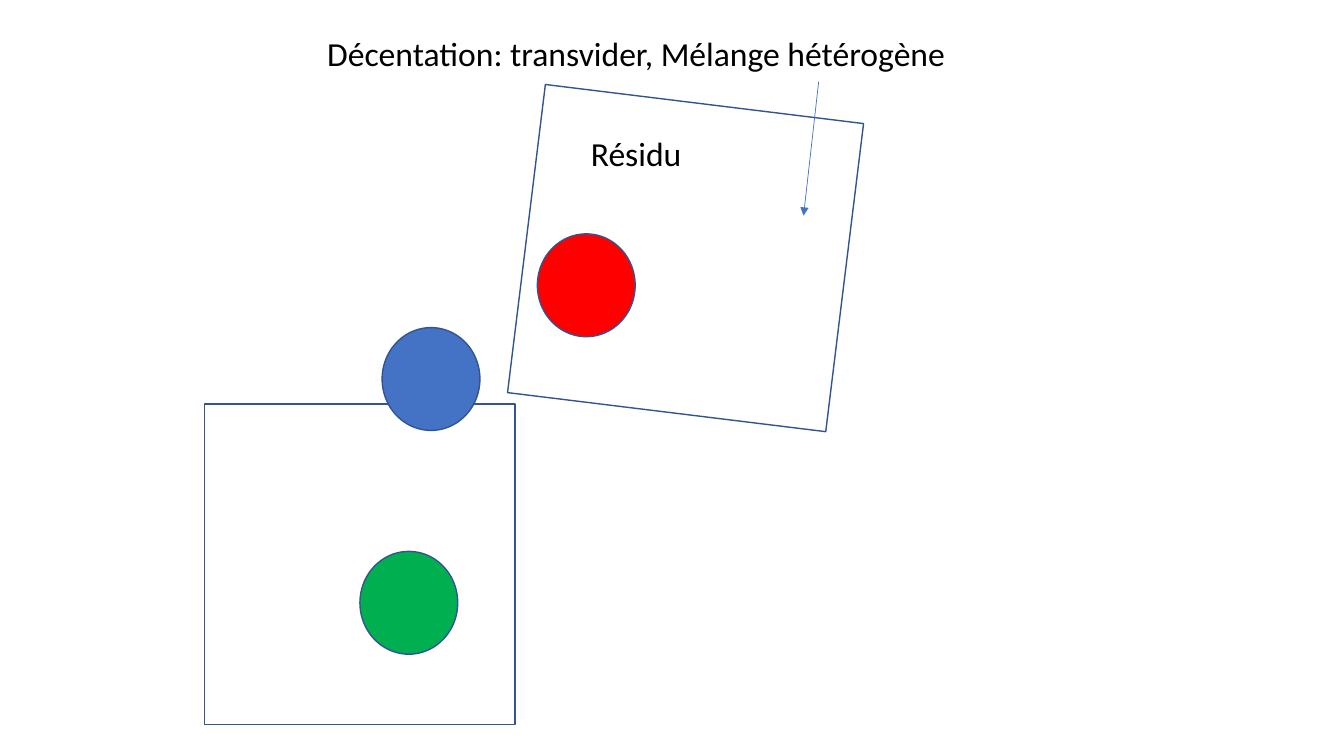
from lxml import etree
from pptx import Presentation
from pptx.dml.color import RGBColor
from pptx.enum.shapes import MSO_CONNECTOR as CONN, MSO_SHAPE as SHAPE
from pptx.enum.text import PP_ALIGN
from pptx.oxml.ns import qn
from pptx.util import Inches, Pt

FONT, BLACK, OUTLINE, BLUE = "Calibri", "000000", "325491", "4472C4"
# text, space before in points
LINES = [("Décentation: transvider, Mélange hétérogène", 0), ("Résidu", 46)]
BEAKER_SIZE = (3.08, 3.18)
BEAKERS = [(2.03, 4.01, 0), (5.26, 0.97, 277)]  # left, top, rotation
BALL_SIZE = (0.97, 1.02)
BALLS = [(3.57, 5.47, "00B050"), (3.79, 3.25, BLUE), (5.33, 2.32, "FF0000")]
ARROW = (8.12, 0.81, 7.97, 2.14)


def rgb(hex_color):
    return RGBColor.from_string(hex_color)


def add_outlined(s, kind, left, top, size, fill=None):
    shape = s.shapes.add_shape(kind, *map(Inches, (left, top, *size)))
    shape.shadow.inherit = False
    if fill:
        shape.fill.solid()
        shape.fill.fore_color.rgb = rgb(fill)
    else:
        shape.fill.background()
    shape.line.color.rgb = rgb(OUTLINE)
    shape.line.width = Pt(1)
    return shape


def add_caption(s):
    tf = s.shapes.add_textbox(*map(Inches, (1.31, 0.32, 10, 1.81))).text_frame
    tf.word_wrap = True
    for i, (text, space) in enumerate(LINES):
        p = tf.add_paragraph() if i else tf.paragraphs[0]
        p.text = text
        p.alignment = PP_ALIGN.CENTER
        p.line_spacing = 0.9
        p.space_before = Pt(space)
        font = p.runs[0].font
        font.name, font.size = FONT, Pt(24)
        font.color.rgb = rgb(BLACK)


def add_arrow(s):
    arrow = s.shapes.add_connector(CONN.STRAIGHT, *map(Inches, ARROW))
    arrow.line.color.rgb = rgb(BLUE)
    arrow.line.width = Pt(0.5)
    etree.SubElement(arrow.line._get_or_add_ln(), qn("a:tailEnd"), type="triangle")
    etree.SubElement(arrow._element.spPr, qn("a:effectLst"))


def main():
    prs = Presentation()
    prs.slide_width, prs.slide_height = Inches(13.33), Inches(7.5)
    s = prs.slides.add_slide(prs.slide_layouts[6])
    add_caption(s)
    for left, top, rotation in BEAKERS:
        add_outlined(s, SHAPE.RECTANGLE, left, top, BEAKER_SIZE).rotation = rotation
    for left, top, color in BALLS:
        add_outlined(s, SHAPE.OVAL, left, top, BALL_SIZE, color)
    add_arrow(s)
    prs.save("out.pptx")


if __name__ == "__main__":
    main()
